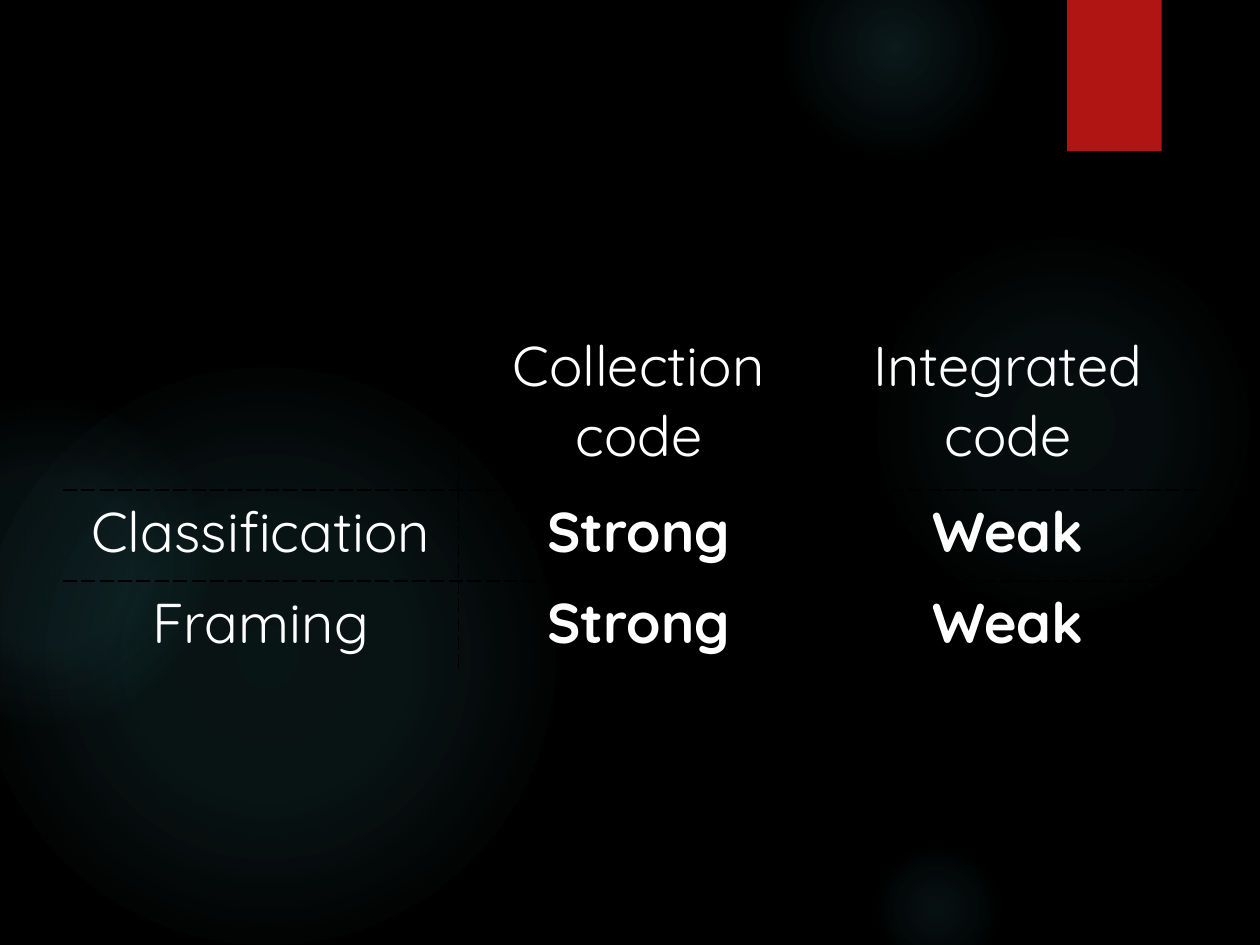
from dataclasses import dataclass

from lxml import etree
from pptx import Presentation
from pptx.dml.color import RGBColor
from pptx.enum.shapes import MSO_SHAPE
from pptx.enum.text import MSO_ANCHOR, PP_ALIGN
from pptx.oxml import parse_xml
from pptx.oxml.ns import nsdecls, qn
from pptx.util import Inches, Pt

OVAL, RECT = MSO_SHAPE.OVAL, MSO_SHAPE.RECTANGLE
CENTER, TOP = PP_ALIGN.CENTER, MSO_ANCHOR.TOP
WIDE, HIGH = Inches(10), Inches(7.5)
COLORS = {"back": "000000", "glow": "50B9C1", "tab": "B01513",
          "text": "FFFFFF", "line": "000000"}
FONT = "Quicksand"
PLAIN = "{2D5ABB26-0587-4C30-8999-92F81FD0307C}"  # no style, no grid


@dataclass
class Glow:
    """Soft circle: percent of slide width (left, size) and height (top)."""
    left: float
    top: float
    size: float
    stops: tuple[tuple[int, int], ...]  # position and opacity, in percent


GLOWS = [
    Glow(68.9, 24.4, 30.8, ((0, 7), (36, 6), (69, 0))),
    Glow(62.2, -6.67, 17.5, ((0, 14), (36, 7), (73, 0))),
    Glow(68.9, 88.93, 10.8, ((0, 9), (36, 5), (66, 0))),
    Glow(-1.7, 38.93, 45.8, ((0, 11), (36, 10), (75, 0))),
    Glow(-9.2, 42.27, 25.8, ((0, 8), (36, 8), (72, 0))),
]
ROWS = [
    ["", "Collection code", "Integrated code"],
    ["Classification", "Strong", "Weak"],
    ["Framing", "Strong", "Weak"],
]
COLS = [31.4, 28.6, 30]      # percent of slide width
TALL = [17.6, 9.6, 9.6]      # percent of slide height


def across(share: float) -> int:
    return round(WIDE * share / 100)


def down(share: float) -> int:
    return round(HIGH * share / 100)


def rgb(name: str) -> RGBColor:
    return RGBColor.from_string(COLORS[name])


def tint(name: str, alpha: int) -> str:
    return (f'<a:srgbClr val="{COLORS[name]}">'
            f'<a:alpha val="{alpha * 1000}"/></a:srgbClr>')


def add_glow(slide, glow: Glow) -> None:
    size = across(glow.size)
    shape = slide.shapes.add_shape(
        OVAL, across(glow.left), down(glow.top), size, size)
    shape.shadow.inherit = False
    shape.line.fill.background()
    stops = "".join(f'<a:gs pos="{pos * 1000}">{tint("glow", alpha)}</a:gs>'
                    for pos, alpha in glow.stops)
    fill = parse_xml(
        f'<a:gradFill {nsdecls("a")} rotWithShape="1"><a:gsLst>{stops}</a:gsLst>'
        '<a:path path="circle"><a:fillToRect l="50000" t="50000" r="50000" '
        'b="50000"/></a:path></a:gradFill>')
    shape._element.spPr.find(qn("a:prstGeom")).addnext(fill)


def add_tab(slide) -> None:
    tab = slide.shapes.add_shape(
        RECT, across(84.7), 0, across(7.5), down(16))
    tab.fill.solid()
    tab.fill.fore_color.rgb = rgb("tab")
    tab.line.fill.background()
    tab.shadow.inherit = False
    tab._element.spPr.find(qn("a:effectLst")).append(parse_xml(
        f'<a:outerShdw {nsdecls("a")} blurRad="{Pt(3)}" dist="{Pt(2)}" '
        f'dir="5400000" rotWithShape="0">{tint("line", 45)}</a:outerShdw>'))


def put_text(cell, text: str, *, size: float = 32, bold: bool = False,
             color: str = "text") -> None:
    cell.vertical_anchor = TOP
    para = cell.text_frame.paragraphs[0]
    para.alignment = CENTER
    run = para.add_run()
    run.text = text
    run.font.name, run.font.size, run.font.bold = FONT, Pt(size), bold
    run.font.color.rgb = rgb(color)


def add_edges(cell, sides: str) -> None:
    """Dash the given sides, in the order L, R, T, B."""
    props = cell._tc.get_or_add_tcPr()
    for side in sides:
        line = etree.SubElement(props, qn(f"a:ln{side}"), w=str(Pt(1)))
        paint = etree.SubElement(line, qn("a:solidFill"))
        etree.SubElement(paint, qn("a:srgbClr"), val=COLORS["line"])
        etree.SubElement(line, qn("a:prstDash"), val="lgDash")


def add_grid(slide) -> None:
    last_row, last_col = len(ROWS) - 1, len(COLS) - 1
    frame = slide.shapes.add_table(
        len(ROWS), len(COLS), across(5), down(34.27),
        across(sum(COLS)), down(sum(TALL)))
    table = frame.table
    table.first_row = table.horz_banding = False
    table._tbl.tblPr.find(qn("a:tableStyleId")).text = PLAIN
    for col, share in zip(table.columns, COLS):
        col.width = across(share)
    for row, share in zip(table.rows, TALL):
        row.height = down(share)
    for r, words in enumerate(ROWS):
        for c, word in enumerate(words):
            cell = table.cell(r, c)
            # Only inner edges are drawn
            inner = {"L": c > 0, "R": c < last_col,
                     "T": r > 0, "B": r < last_row}
            add_edges(cell, "".join(s for s, on in inner.items() if on))
            cell.fill.background()
            if word:
                put_text(cell, word, bold=r > 0 and c > 0)


def main() -> None:
    deck = Presentation()
    deck.slide_width, deck.slide_height = WIDE, HIGH
    slide = deck.slides.add_slide(deck.slide_layouts[6])
    # Backdrop
    slide.background.fill.solid()
    slide.background.fill.fore_color.rgb = rgb("back")
    for glow in GLOWS:
        add_glow(slide, glow)
    add_tab(slide)
    # Codes compared
    add_grid(slide)
    deck.save("out.pptx")


if __name__ == "__main__":
    main()
